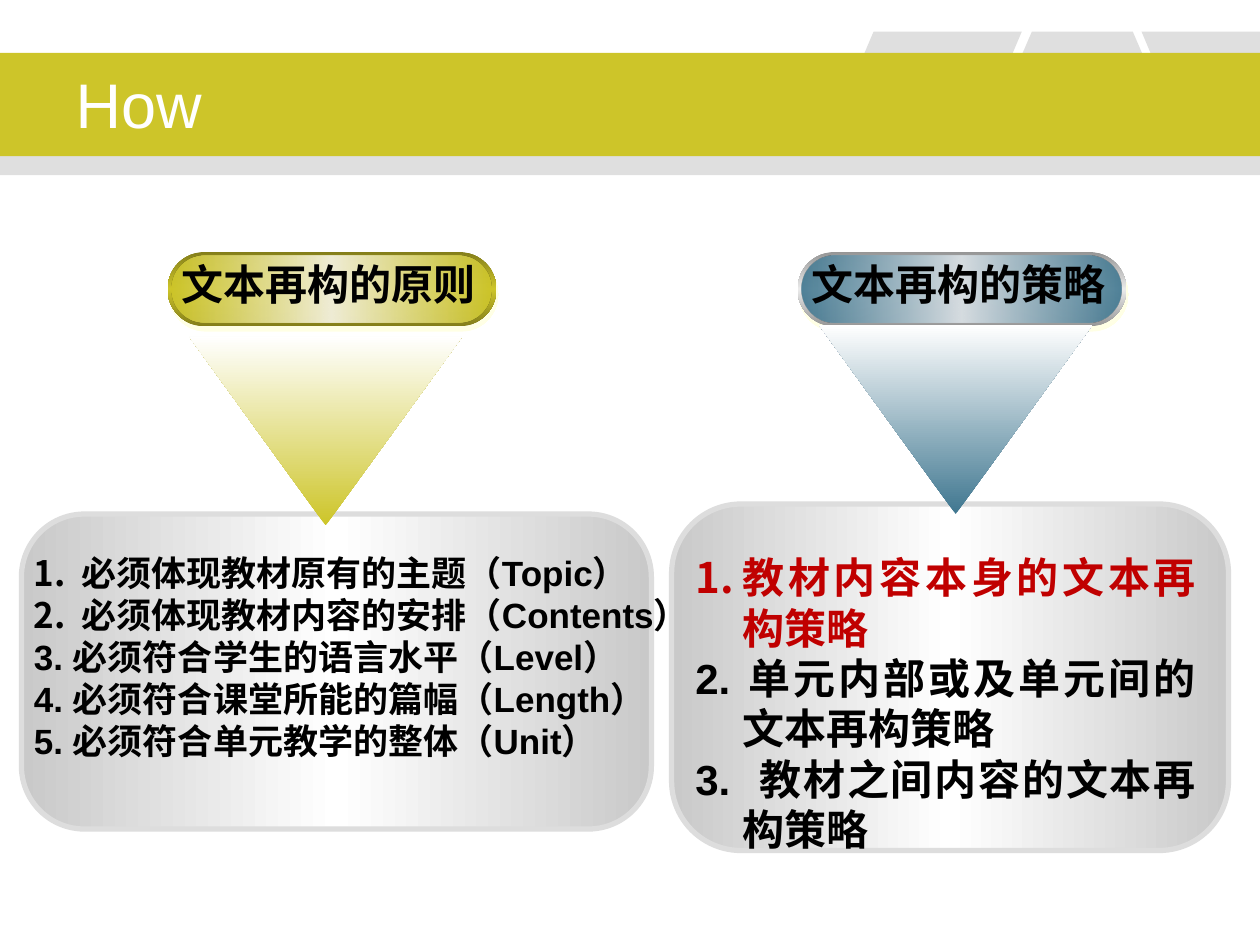
from lxml.etree import SubElement
from pptx import Presentation
from pptx.dml.color import RGBColor
from pptx.enum.lang import MSO_LANGUAGE_ID
from pptx.enum.shapes import MSO_SHAPE
from pptx.enum.text import MSO_ANCHOR, PP_ALIGN
from pptx.oxml.ns import qn
from pptx.util import Inches, Pt

COLORS = {
    "gold": "CDC529", "gold_dark": "847E1A", "gold_pale": "F0EDD6",
    "blue": "407790", "blue_pale": "D7DDE1",
    "steel": "969696", "steel_pale": "EAEAEA",
    "gray": "808080", "panel": "C9C9C9", "panel_line": "DDDDDD",
    "glow": "FFFFCC", "white": "FFFFFF", "black": "000000", "red": "C00000",
}
FONT = "Arial"
INDENT = Inches(0.375)


def add_color(parent, color, alpha=100):
    node = SubElement(parent, qn("a:srgbClr"), val=COLORS[color])
    if alpha < 100:
        SubElement(node, qn("a:alpha"), val=str(alpha * 1000))
    return node


def write_text(paragraph, text, size=20, color="black", bold=True,
               align=PP_ALIGN.LEFT, hanging=False, numbered=False):
    paragraph.alignment = align
    properties = paragraph._p.get_or_add_pPr()
    if hanging:
        properties.set("marL", str(INDENT))
        properties.set("indent", str(-INDENT))
    if numbered:
        SubElement(properties, qn("a:buFontTx"))
        SubElement(properties, qn("a:buAutoNum"), type="arabicPeriod")
    run = paragraph.add_run()
    run.text = text
    run.font.name = FONT
    run.font.size = Pt(size)
    run.font.bold = bold
    run.font.color.rgb = RGBColor.from_string(COLORS[color])
    run.font.language_id = MSO_LANGUAGE_ID.SIMPLIFIED_CHINESE


class SlideBuilder:
    def __init__(self, slide):
        self.slide = slide
        self.shapes = slide.shapes

    def fill(self, shape, color, alpha=100):
        shape.shadow.inherit = False
        shape.line.fill.background()
        shape.fill.solid()
        shape.fill.fore_color.rgb = RGBColor.from_string(COLORS[color])
        if alpha < 100:
            node = shape._element.spPr.find(".//" + qn("a:srgbClr"))
            SubElement(node, qn("a:alpha"), val=str(alpha * 1000))

    def shape(self, kind, left, top, width, height, color, alpha=100, adjust=None):
        shape = self.shapes.add_shape(
            kind, Inches(left), Inches(top), Inches(width), Inches(height))
        self.fill(shape, color, alpha)
        if adjust is not None:
            shape.adjustments[0] = adjust
        return shape

    def outline(self, points, color, alpha):
        corners = [(Inches(x), Inches(y)) for x, y in points]
        builder = self.shapes.build_freeform(*corners[0])
        builder.add_line_segments(corners[1:], close=True)
        self.fill(builder.convert_to_shape(), color, alpha)

    def gradient(self, shape, colors, angle=0, edge_alpha=100):
        shape.fill.gradient()
        grad = shape._element.spPr.find(qn("a:gradFill"))
        for child in list(grad):
            grad.remove(child)
        stops = SubElement(grad, qn("a:gsLst"))
        last = len(colors) - 1
        for index, color in enumerate(colors):
            stop = SubElement(stops, qn("a:gs"), pos=str(100000 * index // last))
            add_color(stop, color, edge_alpha if index in (0, last) else 100)
        SubElement(grad, qn("a:lin"), ang=str(angle * 60000), scaled="1")

    def title(self, text, left, top, width, height):
        title = self.shapes.title
        title.left, title.top = Inches(left), Inches(top)
        title.width, title.height = Inches(width), Inches(height)
        title.text_frame.vertical_anchor = MSO_ANCHOR.MIDDLE
        write_text(title.text_frame.paragraphs[0], text,
                   size=36, color="white", bold=False)
        # Bring the title in front of the band
        self.shapes._spTree.append(title._element)

    def text(self, lines, left, top, width, height, wrap=True, **style):
        box = self.shapes.add_textbox(
            Inches(left), Inches(top), Inches(width), Inches(height))
        frame = box.text_frame
        frame.word_wrap = wrap
        for index, (line, extra) in enumerate(lines):
            paragraph = frame.add_paragraph() if index else frame.paragraphs[0]
            write_text(paragraph, line, **{**style, **extra})

    def panel(self, left, top, width, height):
        panel = self.shape(MSO_SHAPE.ROUNDED_RECTANGLE, left, top, width, height,
                           "panel", adjust=0.2)
        self.gradient(panel, ["panel", "white", "panel"])
        panel.line.color.rgb = RGBColor.from_string(COLORS["panel_line"])
        panel.line.width = Pt(3)

    def pill(self, label, left, rim, face):
        top = 2
        outer = self.shape(MSO_SHAPE.ROUNDED_RECTANGLE, left, top, 2.61, 0.59,
                           rim[0], adjust=0.5)
        self.gradient(outer, rim, angle=90)
        effects = outer._element.spPr.find(qn("a:effectLst"))
        shadow = SubElement(effects, qn("a:outerShdw"), dist=str(Pt(3.2)),
                            dir=str(72 * 60000), algn="ctr", rotWithShape="0")
        add_color(shadow, "glow", 50)
        inner = self.shape(MSO_SHAPE.ROUNDED_RECTANGLE, left + 0.03, top + 0.03,
                           2.54, 0.53, face[0], adjust=0.5)
        self.gradient(inner, face, edge_alpha=90)
        self.text([(label, {})], left, top, 2.55, 0.5, wrap=False,
                  size=24, align=PP_ALIGN.CENTER)

    def pointer(self, left, top, color):
        pointer = self.shape(MSO_SHAPE.ISOSCELES_TRIANGLE, left, top, 2.17, 1.5, color)
        pointer._element.spPr.find(qn("a:xfrm")).set("flipV", "1")
        self.gradient(pointer, [color, "white"], angle=90)


def main():
    deck = Presentation()
    deck.slide_width, deck.slide_height = Inches(10), Inches(7.5)
    page = SlideBuilder(deck.slides.add_slide(deck.slide_layouts[5]))

    # Header: tabs, gold band and title
    page.shape(MSO_SHAPE.RECTANGLE, 0, 0.89, 10, 0.5, "gray", alpha=25)
    page.shape(MSO_SHAPE.PARALLELOGRAM, 6.53, 0.25, 1.58, 0.95, "gray",
               alpha=25, adjust=0.425)
    page.outline([(7.78, 1.2), (8.19, 0.25), (8.99, 0.25), (9.4, 1.2)], "gray", 25)
    page.outline([(9.06, 0.25), (9.46, 1.2), (10, 1.2), (10, 0.25)], "gray", 25)
    page.shape(MSO_SHAPE.RECTANGLE, 0, 0.42, 10, 0.82, "gold")
    page.title("How", 0.5, 0.47, 6.17, 0.7)

    # Principles panel
    numbered = {"numbered": True}
    page.panel(0.17, 4.08, 5, 2.5)
    page.text([
        ("必须体现教材原有的主题（Topic）", numbered),
        ("必须体现教材内容的安排（Contents）", numbered),
        ("3. 必须符合学生的语言水平（Level）", {}),
        ("4. 必须符合课堂所能的篇幅（Length）", {}),
        ("5. 必须符合单元教学的整体（Unit）", {}),
    ], 0.17, 4.33, 5.42, 1.78, hanging=True)

    # Strategies panel
    page.panel(5.33, 4, 4.42, 2.75)
    page.text([
        ("教材内容本身的文本再构策略", {"numbered": True, "color": "red"}),
        ("2. 单元内部或及单元间的文本再构策略", {}),
        ("3.  教材之间内容的文本再构策略", {}),
    ], 5.42, 4.33, 4.17, 2.52, size=24, align=PP_ALIGN.JUSTIFY, hanging=True)

    # Headings and the pointers below them
    page.pill("文本再构的策略", 6.33, ["steel", "steel_pale", "steel"],
              ["blue", "blue_pale", "blue"])
    page.pill("文本再构的原则", 1.33, ["gold_dark", "gold", "gold_dark"],
              ["gold", "gold_pale", "gold"])
    page.pointer(1.5, 2.67, "gold")
    page.pointer(6.5, 2.58, "blue")

    deck.save("out.pptx")


if __name__ == "__main__":
    main()
